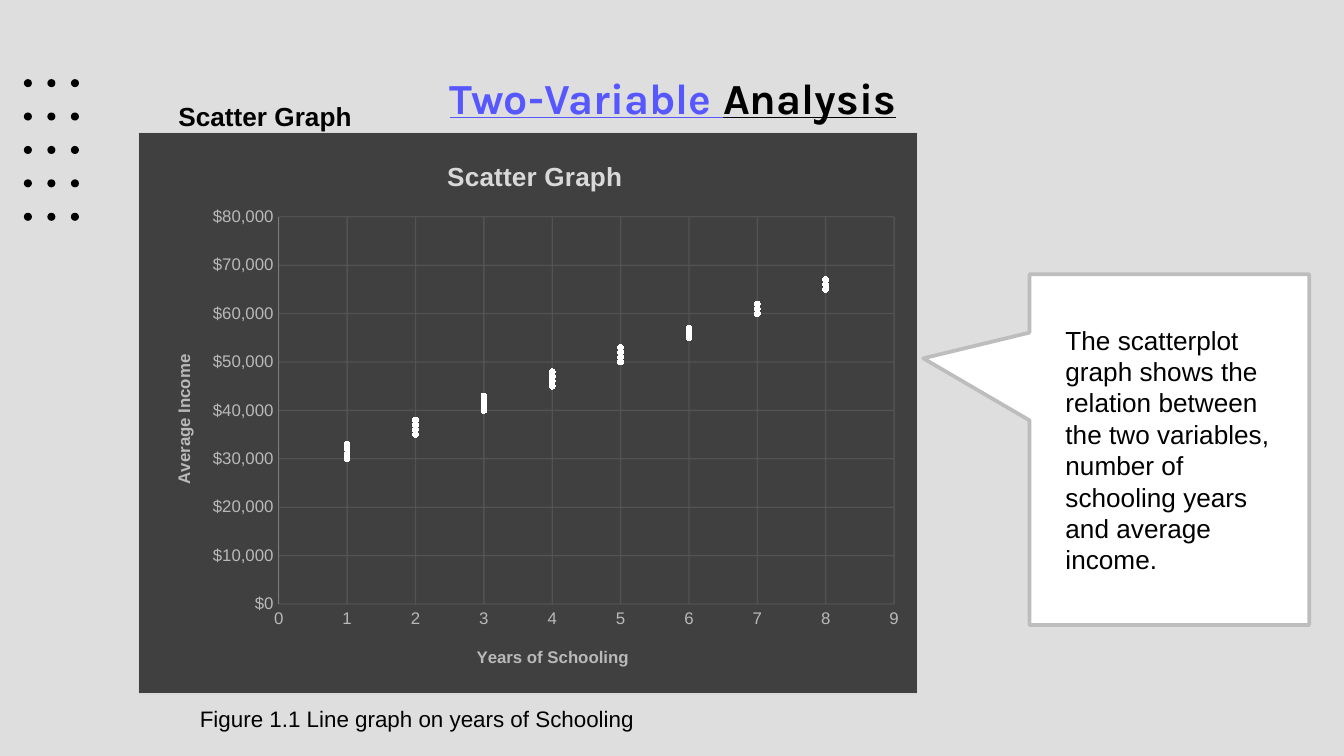
from dataclasses import dataclass
from lxml import etree
from pptx import Presentation
from pptx import util as u
from pptx.chart import data
from pptx.dml import color
from pptx.enum import chart as ch, shapes, text
from pptx.oxml import ns

Pt = u.Pt
rgb = color.RGBColor.from_string


@dataclass(frozen=True)
class Theme:
    back: str = "DEDEDE"
    ink: str = "000000"
    accent: str = "5757FF"
    paper: str = "FFFFFF"
    edge: str = "BDBDBD"
    panel: str = "404040"
    rim: str = "D9D9D9"
    label: str = "B9B9B9"
    axis: str = "7C7C7C"
    grid: str = "595959"
    head: str = "Karla"
    body: str = "Arial"
    big: float = 23
    mid: float = 14
    small: float = 12
    base: float = 10
    tick: float = 9


class Deck:
    def __init__(self, theme, width, height):
        self.theme = theme
        self.prs = Presentation()
        self.prs.slide_width, self.prs.slide_height = Pt(width), Pt(height)
        self.slide = self.prs.slides.add_slide(self.prs.slide_layouts[6])
        fill = self.slide.background.fill
        fill.solid()
        fill.fore_color.rgb = rgb(theme.back)

    def style(self, font, size, hue, face=None, bold=False, line=None):
        font.name = face or self.theme.body
        font.size, font.bold, font.underline = Pt(size), bold, line
        font.color.rgb = rgb(hue)

    def run(self, para, words, size, hue, **more):
        run = para.add_run()
        run.text = words
        self.style(run.font, size, hue, **more)

    def text(self, box, runs, align=text.PP_ALIGN.LEFT,
             anchor=text.MSO_ANCHOR.TOP, **more):
        frame = self.slide.shapes.add_textbox(*map(Pt, box)).text_frame
        frame.word_wrap, frame.vertical_anchor = True, anchor
        para = frame.paragraphs[0]
        para.alignment = align
        for words, size, hue in runs:
            self.run(para, words, size, hue, **more)

    def dots(self, left, top, cols, rows, dx, dy, size):
        group = self.slide.shapes.add_group_shape()
        for col in range(cols):
            for row in range(rows):
                dot = group.shapes.add_shape(
                    shapes.MSO_SHAPE.OVAL, Pt(left + col * dx),
                    Pt(top + row * dy), Pt(size), Pt(size))
                dot.shadow.inherit = False
                dot.fill.solid()
                dot.fill.fore_color.rgb = rgb(self.theme.ink)
                dot.line.fill.background()

    def callout(self, box, tip, words, indent):
        t = self.theme
        shape = self.slide.shapes.add_shape(
            shapes.MSO_SHAPE.RECTANGULAR_CALLOUT, *map(Pt, box))
        shape.adjustments[0], shape.adjustments[1] = tip
        shape.shadow.inherit = False
        shape.fill.solid()
        shape.fill.fore_color.rgb = rgb(t.paper)
        shape.line.color.rgb, shape.line.width = rgb(t.edge), Pt(2)
        frame = shape.text_frame
        frame.word_wrap = True
        frame.vertical_anchor = text.MSO_ANCHOR.MIDDLE
        para = frame.paragraphs[0]
        para.alignment = text.PP_ALIGN.LEFT
        para._p.get_or_add_pPr().set("marL", str(Pt(indent)))
        self.run(para, words, t.mid, t.ink)

    def place(self, owner, spot, inner=False):
        lay = owner.find(ns.qn("c:layout"))
        if lay is None:
            lay = etree.Element(ns.qn("c:layout"))
            owner.insert(len(owner.findall(ns.qn("c:tx"))), lay)
        man = etree.SubElement(lay, ns.qn("c:manualLayout"))
        pairs = [("layoutTarget", "inner")] if inner else []
        pairs += [("xMode", "edge"), ("yMode", "edge"), *zip("xywh", spot)]
        for tag, val in pairs:
            etree.SubElement(man, ns.qn("c:" + tag)).set("val", str(val))

    def title(self, owner, words, size, hue, spot):
        para = owner.text_frame.paragraphs[0]
        self.run(para, words, size, hue, bold=True)
        self.place(owner._element, spot)

    def axis(self, axis, top, step, form, words, spot):
        t = self.theme
        axis.minimum_scale, axis.maximum_scale = 0, top
        axis.major_unit = step
        axis.major_tick_mark = axis.minor_tick_mark = ch.XL_TICK_MARK.NONE
        axis.tick_labels.number_format = form
        axis.tick_labels.number_format_is_linked = False
        self.style(axis.tick_labels.font, t.tick, t.label)
        axis.has_major_gridlines = True
        line = axis.major_gridlines.format.line
        line.color.rgb, line.width = rgb(t.grid), Pt(0.75)
        self.title(axis.axis_title, words, t.tick, t.label, spot)

    def scatter(self, box, points):
        t = self.theme
        source = data.XyChartData()
        series = source.add_series("Series 1")
        for x, y in points:
            series.add_data_point(x, y)
        chart = self.slide.shapes.add_chart(
            ch.XL_CHART_TYPE.XY_SCATTER, *map(Pt, box), source).chart
        self.style(chart.font, t.base, t.ink)
        chart.has_legend = False
        chart.has_title = True
        self.title(chart.chart_title, "Scatter Graph", t.mid, t.rim,
                   (0.39, 0.04))

        xs, ys = chart.category_axis, chart.value_axis
        self.axis(xs, 9, 1, "General", "Years of Schooling", (0.43, 0.91))
        self.axis(ys, 80000, 10000, '"$"#,##0', "Average Income",
                  (0.04, 0.39))
        xs.format.line.fill.background()
        ys.format.line.color.rgb = rgb(t.axis)
        ys.format.line.width = Pt(0.75)

        plot = chart.plots[0]
        plot.vary_by_categories = False
        series = plot.series[0]
        series.smooth = False
        series.format.line.fill.background()
        mark = series.marker
        mark.style, mark.size = ch.XL_MARKER_STYLE.CIRCLE, 3
        mark.format.fill.solid()
        mark.format.fill.fore_color.rgb = rgb(t.paper)
        mark.format.line.color.rgb = rgb(t.paper)

        root = chart._chartSpace
        for hue in root.xpath(".//c:majorGridlines//a:srgbClr"):
            etree.SubElement(hue, ns.qn("a:alpha")).set("val", "75000")
        self.place(root.xpath(".//c:plotArea")[0],
                   (0.18, 0.15, 0.79, 0.69), True)
        root.xpath("./c:chart")[0].addnext(etree.fromstring(
            f'<c:spPr {ns.nsdecls("c", "a")}>'
            f'<a:solidFill><a:srgbClr val="{t.panel}"/></a:solidFill>'
            f'<a:ln w="{Pt(0.75)}"><a:solidFill><a:srgbClr val="{t.rim}"/>'
            '</a:solidFill></a:ln></c:spPr>'))


def main():
    t = Theme()
    deck = Deck(t, 720, 405)
    deck.text((57, 29.5, 607, 45.5),
              [("Two-Variable ", t.big, t.accent), ("Analysis", t.big, t.ink)],
              text.PP_ALIGN.CENTER, text.MSO_ANCHOR.MIDDLE,
              face=t.head, bold=True, line=True)
    deck.dots(12.8, 42.4, 3, 5, 12.6, 17.9, 4.3)
    deck.text((88.5, 50.4, 361, 24.5), [("Scatter Graph", t.mid, t.ink)],
              bold=True)
    deck.text((100, 374.4, 260, 21.6),
              [("Figure 1.1 Line graph on years of Schooling",
                t.small, t.ink)])
    pay = [45, 60, 30, 65, 50, 40, 35, 55, 41, 51, 31, 66, 61, 46, 36,
           56, 67, 32, 52, 37, 62, 47, 57, 42, 33, 48, 38, 43, 53]
    deck.scatter((73.9, 70.7, 418, 301.5),
                 [(k // 5 - 5, k * 1000) for k in pay])
    deck.callout((551.5, 146.9, 149.8, 187.9), (-0.88, -0.26),
                 "The scatterplot graph shows the relation between the two "
                 "variables, number of schooling years and average income.",
                 12.2)
    deck.prs.save("out.pptx")


if __name__ == "__main__":
    main()
